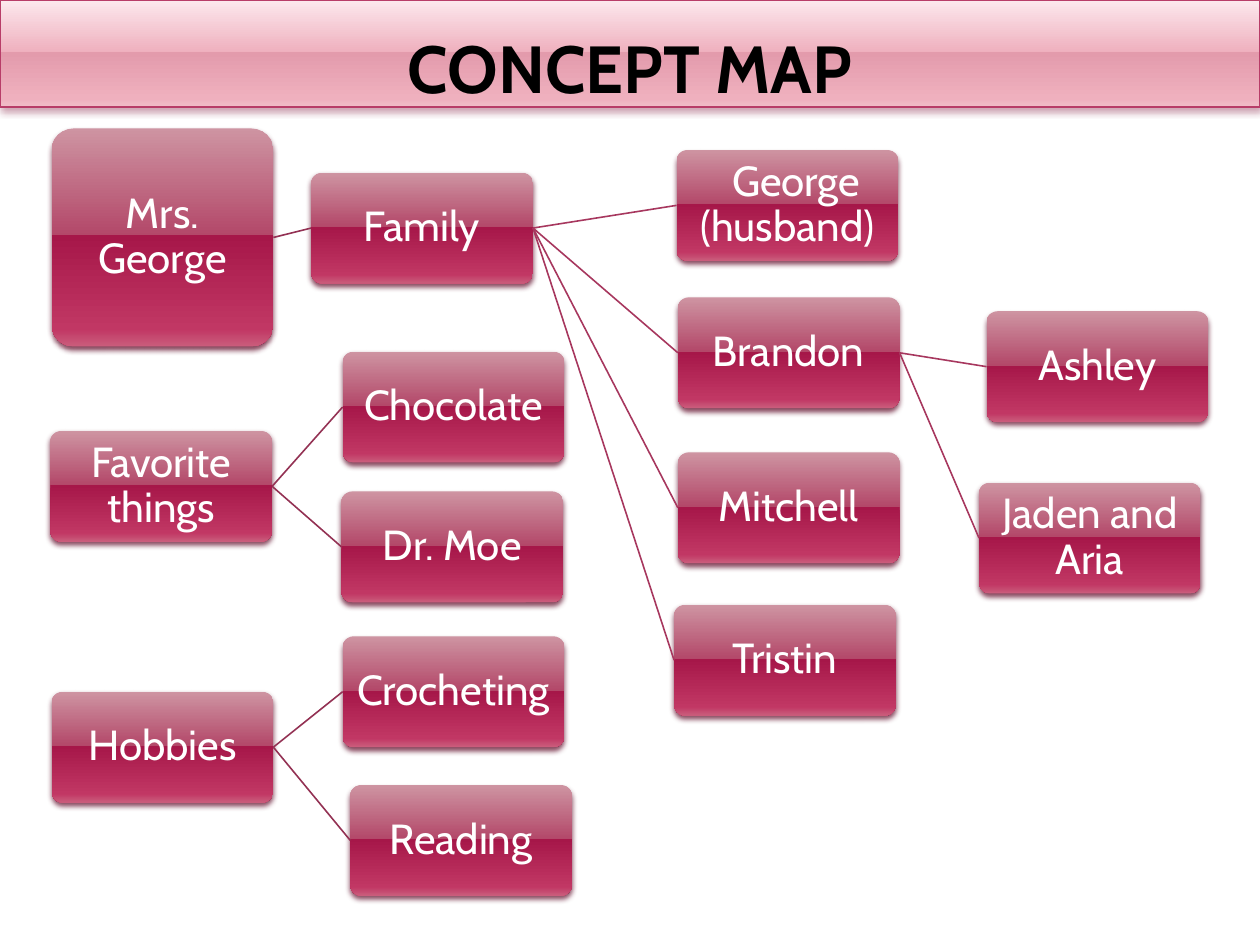
from lxml import etree
from pptx import Presentation
from pptx.dml.color import RGBColor
from pptx.enum.shapes import MSO_CONNECTOR, MSO_SHAPE
from pptx.enum.text import MSO_ANCHOR, PP_ALIGN
from pptx.oxml.ns import qn
from pptx.util import Inches, Pt

RECT, ROUND = MSO_SHAPE.RECTANGLE, MSO_SHAPE.ROUNDED_RECTANGLE
LINE = MSO_CONNECTOR.STRAIGHT
MIDDLE, BOTTOM = MSO_ANCHOR.MIDDLE, MSO_ANCHOR.BOTTOM
CENTER = PP_ALIGN.CENTER
LEFT, RIGHT = 1, 3

BLACK = RGBColor(0x00, 0x00, 0x00)
WHITE = RGBColor(0xFF, 0xFF, 0xFF)
EDGE = RGBColor(0xB8, 0x3D, 0x68)
ROOT = RGBColor(0x93, 0x31, 0x53)
TWIG = RGBColor(0xA7, 0x37, 0x5E)

STOPS = (0, 49, 49, 92, 100)
PINK = [RGBColor.from_string(c) for c in ("FCE8ED", "EFB0BE", "E39BAC", "EFB0BE", "F0BEC9")]
WINE = [RGBColor.from_string(c) for c in ("CE94A2", "B34869", "A61749", "C13764", "CA5D7C")]
PALE = (RGBColor(0x7F, 0x12, 0x38), 38, 4)
DEEP = (RGBColor(0x72, 0x26, 0x40), 83, 3.1)

FONT = "Cabin"
TITLE = "CONCEPT MAP"
WIDE, HIGH, TALL = 1.76, 0.88, 1.73
INSET = 0.05

NODES = {
    "Mrs. George": (0.41, 1.02, TALL),
    "Family": (2.47, 1.37, HIGH),
    "George (husband)": (5.37, 1.19, HIGH),
    "Brandon": (5.38, 2.36, HIGH),
    "Ashley": (7.83, 2.47, HIGH),
    "Jaden and Aria": (7.77, 3.83, HIGH),
    "Mitchell": (5.38, 3.59, HIGH),
    "Tristin": (5.35, 4.8, HIGH),
    "Favorite things": (0.4, 3.42, HIGH),
    "Chocolate": (2.72, 2.79, HIGH),
    "Dr. Moe": (2.71, 3.9, HIGH),
    "Hobbies": (0.41, 5.49, HIGH),
    "Crocheting": (2.72, 5.05, HIGH),
    "Reading": (2.78, 6.23, HIGH),
}
LINKS = [
    ("Mrs. George", ROOT, ["Family"]),
    ("Family", TWIG, ["George (husband)", "Brandon", "Mitchell", "Tristin"]),
    ("Brandon", TWIG, ["Ashley", "Jaden and Aria"]),
    ("Favorite things", ROOT, ["Chocolate", "Dr. Moe"]),
    ("Hobbies", ROOT, ["Crocheting", "Reading"]),
]
SHIFTS = {"George (husband)": 0.14}


def add(parent, tag, **attrs):
    node = etree.SubElement(parent, qn(tag))
    for key, value in attrs.items():
        node.set(key, str(value))
    return node


def tint(parent, color, alpha=None):
    node = add(parent, "a:srgbClr", val=color)
    if alpha:
        add(node, "a:alpha", val=alpha * 1000)


def gloss(shape, colors, shade):
    shape.fill.gradient()
    shape.fill.gradient_angle = 270
    stops = shape.element.spPr.find(qn("a:gradFill")).find(qn("a:gsLst"))
    for old in list(stops):
        stops.remove(old)
    for spot, color in zip(STOPS, colors):
        tint(add(stops, "a:gs", pos=spot * 1000), color)
    color, alpha, blur = shade
    shape.shadow.inherit = False
    glow = add(shape.element.spPr.find(qn("a:effectLst")), "a:outerShdw",
               blurRad=Pt(blur), dist=Pt(2), dir=5400000, rotWithShape=0)
    tint(glow, color, alpha)


def write(shape, text, size, color, anchor, pad):
    frame = shape.text_frame
    frame.text = text
    frame.word_wrap = True
    frame.vertical_anchor = anchor
    frame.margin_left = frame.margin_right = Inches(INSET)
    frame.margin_top = frame.margin_bottom = Inches(pad)
    para = frame.paragraphs[0]
    para.alignment = CENTER
    font = para.runs[0].font
    font.name, font.size, font.color.rgb = FONT, Pt(size), color
    return para


deck = Presentation()
deck.slide_width, deck.slide_height = Inches(10), Inches(7.5)
slide = deck.slides.add_slide(deck.slide_layouts[6])
shapes = slide.shapes

band = shapes.add_shape(RECT, 0, 0, Inches(10), Inches(0.85))
gloss(band, PINK, PALE)
band.line.color.rgb = EDGE
band.line.width = Pt(0.9)
write(band, TITLE, 38, BLACK, BOTTOM, 0).runs[0].font.bold = True

boxes = {}
for name, (x, y, high) in NODES.items():
    box = shapes.add_shape(ROUND, Inches(x), Inches(y), Inches(WIDE), Inches(high))
    box.adjustments[0] = 0.1
    gloss(box, WINE, DEEP)
    box.line.fill.background()
    para = write(box, name, 24, WHITE, MIDDLE, INSET)
    para.line_spacing = 0.9
    para.space_after = Pt(8.4)
    if name in SHIFTS:
        para._p.get_or_add_pPr().set("indent", str(Inches(SHIFTS[name])))
    boxes[name] = box

for start, color, ends in LINKS:
    for end in ends:
        link = shapes.add_connector(LINE, 0, 0, 0, 0)
        link.begin_connect(boxes[start], RIGHT)
        link.end_connect(boxes[end], LEFT)
        link.line.color.rgb = color
        link.line.width = Pt(0.9)
        add(link.element.spPr, "a:effectLst")

deck.save("out.pptx")
